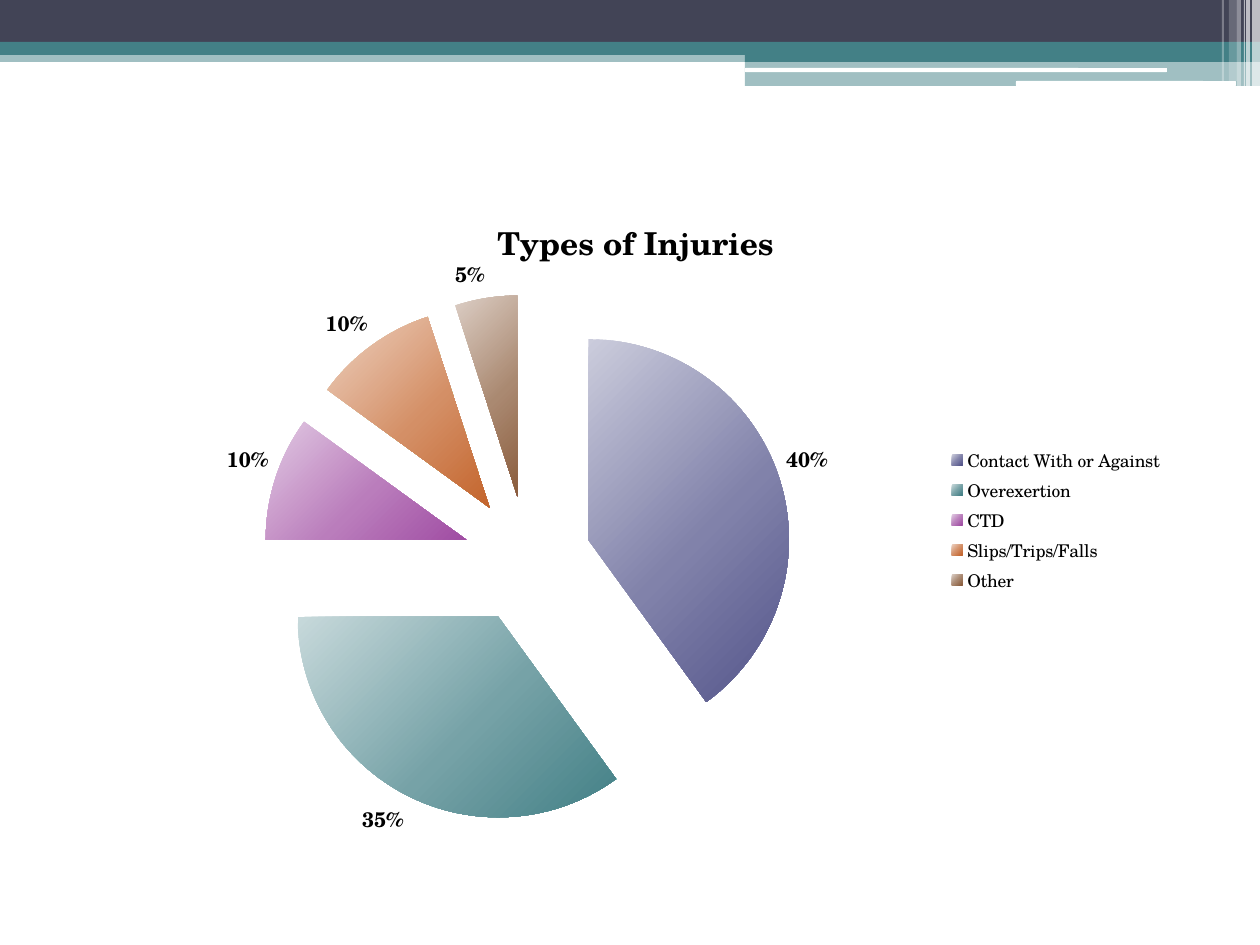
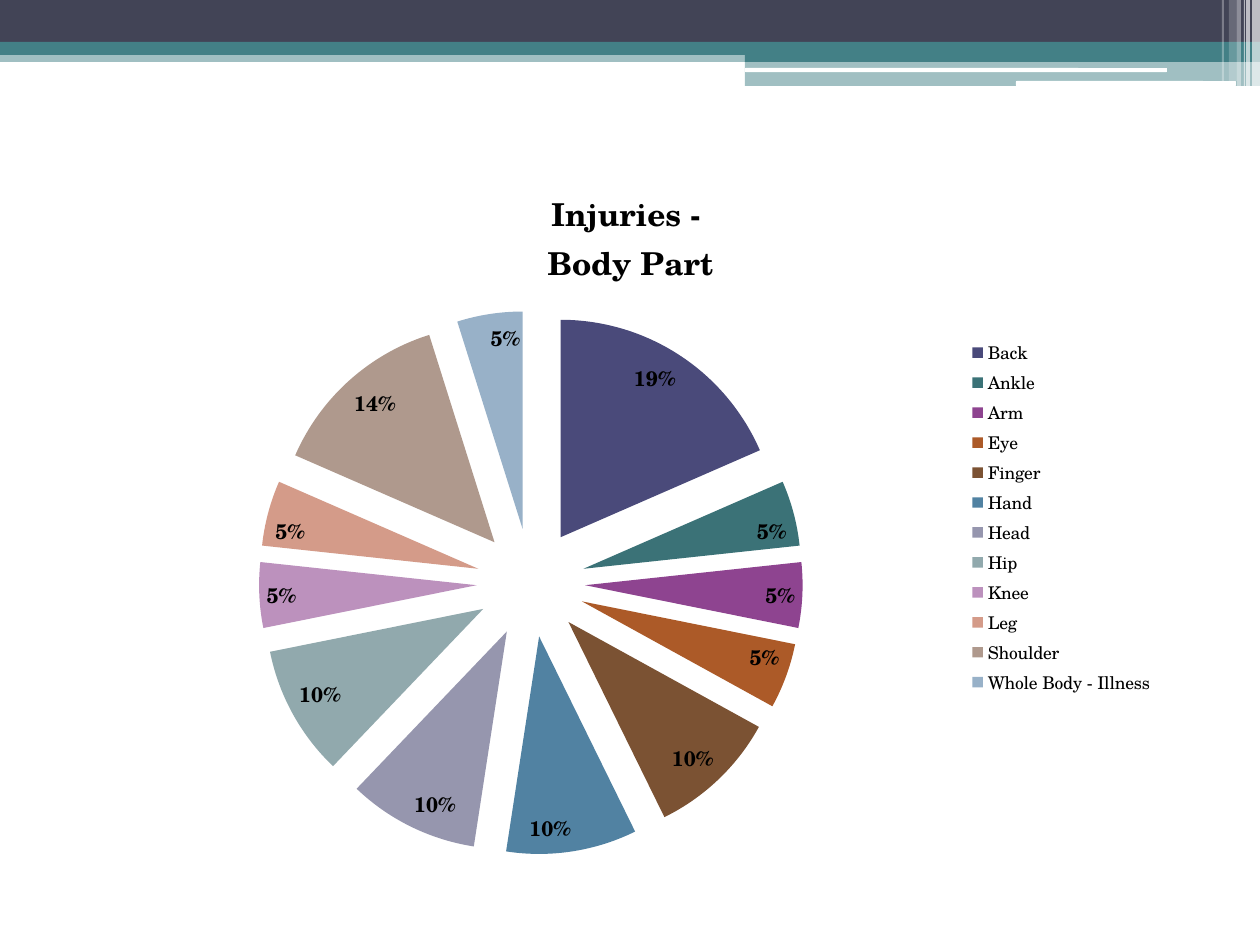
"""Build two injury pie-chart slides under a shared layered header."""
from copy import deepcopy
from dataclasses import dataclass

from lxml import etree
from pptx import Presentation
from pptx.chart.data import CategoryChartData
from pptx.dml.color import RGBColor
from pptx.enum.chart import XL_CHART_TYPE, XL_LABEL_POSITION, XL_LEGEND_POSITION
from pptx.enum.shapes import MSO_SHAPE
from pptx.oxml.ns import qn
from pptx.util import Pt

PIE = XL_CHART_TYPE.PIE
RIGHT = XL_LEGEND_POSITION.RIGHT
OUT, IN = XL_LABEL_POSITION.OUTSIDE_END, XL_LABEL_POSITION.INSIDE_END
RECT, ROUND = MSO_SHAPE.RECTANGLE, MSO_SHAPE.ROUNDED_RECTANGLE
PX = 914400 / 126


@dataclass(frozen=True)
class Theme:
    """Colours, font and type sizes."""
    dark: str = "424456"
    teal: str = "438086"
    white: str = "FFFFFF"
    ink: str = "000000"
    font: str = "TeX Gyre Schola"
    title: int = 18
    label: int = 12
    body: int = 10


THEME = Theme()

BANDS = [
    (RECT, (0, 50, 1260, 12), THEME.teal, 50),
    (RECT, (0, 0, 1260, 43), THEME.dark, 100),
    (RECT, (0, 42, 1260, 13), THEME.teal, 100),
    (RECT, (745, 49, 515, 13), THEME.teal, 100),
    (RECT, (745, 61, 515, 25), THEME.teal, 50),
    (ROUND, (745, 68, 422, 4), THEME.white, 100),
    (ROUND, (1016, 81, 220, 5), THEME.white, 100),
]
STRIPES = [(1252, 8, 86, 65), (1246, 4, 86, 65), (1244, 1, 86, 60),
           (1237, 4, 86, 40), (1229, 8, 81, 20), (1222, 2, 81, 30)]
BANDS += [(RECT, (x, 0, w, h), THEME.white, alpha) for x, w, h, alpha in STRIPES]

CHARTS = [
    {
        "title": "Types of Injuries", "box": (95, 189, 1081, 662),
        "plot": {"x": 0.02, "y": 0.16, "w": 0.76, "h": 0.8},
        "burst": 32, "place": OUT, "shade": True,
        "rows": [
            ("Contact With or Against", 40, "53548A"),
            ("Overexertion", 35, "438086"),
            ("CTD", 10, "A04DA3"),
            ("Slips/Trips/Falls", 10, "C4652D"),
            ("Other", 5, "8B5D3D"),
        ],
    },
    {
        "title": "Injuries - \nBody Part", "box": (95, 163, 1071, 709),
        "plot": None, "burst": 25, "place": IN, "shade": False,
        "rows": [
            ("Back", 19, "4A4A7A"), ("Ankle", 5, "3B7277"),
            ("Arm", 5, "8E4490"), ("Eye", 5, "AC5A28"),
            ("Finger", 10, "7B5233"), ("Hand", 10, "5182A2"),
            ("Head", 10, "9696AE"), ("Hip", 10, "91A9AD"),
            ("Knee", 5, "BC91BD"), ("Leg", 5, "D49B89"),
            ("Shoulder", 14, "AF998D"), ("Whole Body - Illness", 5, "98B1C8"),
        ],
    },
]


def rgb(code):
    """Turn a hex code into a colour."""
    return RGBColor.from_string(code)


def tint(code, part):
    """Blend a colour towards white."""
    return RGBColor(*(round(c + (255 - c) * part) for c in rgb(code)))


def scale(box):
    """Turn px into EMU."""
    return [round(n * PX) for n in box]


def style(font, size, bold):
    """Set the face, size, weight and colour of a font."""
    font.name, font.size, font.bold = THEME.font, Pt(size), bold
    font.color.rgb = rgb(THEME.ink)


def header(slide, layout):
    """Draw the bands and hand them to the layout."""
    for spot in list(layout.placeholders):
        layout.shapes.element.remove(spot.element)
    parts = []
    for kind, box, code, alpha in BANDS:
        part = slide.shapes.add_shape(kind, *scale(box))
        part.shadow.inherit = False
        part.fill.solid()
        part.fill.fore_color.rgb = rgb(code)
        part.line.fill.background()
        if alpha < 100:
            tone = part.element.spPr.find(".//" + qn("a:srgbClr"))
            etree.SubElement(tone, qn("a:alpha"), val=str(alpha * 1000))
        parts.append(part)
    for part in parts:
        layout.shapes.element.append(part.element)


def blend(fill, code, root):
    """Fill a slice with a diagonal three-stop gradient."""
    fill.gradient()
    fill.gradient_angle = 315
    stops = root.findall(".//" + qn("a:gsLst"))[-1]
    stops.append(deepcopy(stops[-1]))
    steps = ((0, 0.7), (0.55, 0.27), (1, 0))
    for stop, (pos, part) in zip(fill.gradient_stops, steps):
        stop.position = pos
        stop.color.rgb = tint(code, part)


def arrange(chart, plot):
    """Place the inner plot area by fractions of the chart."""
    area = chart.element.find(".//" + qn("c:plotArea"))
    old = area.find(qn("c:layout"))
    if old is not None:
        area.remove(old)
    frame = etree.Element(qn("c:layout"))
    area.insert(0, frame)
    hand = etree.SubElement(frame, qn("c:manualLayout"))
    pairs = [("layoutTarget", "inner"), ("xMode", "edge"), ("yMode", "edge")]
    for key, val in pairs + list(plot.items()):
        etree.SubElement(hand, qn("c:" + key), val=str(val))


def draw(slide, item):
    """Add one exploded pie."""
    names, vals, codes = zip(*item["rows"])
    data = CategoryChartData()
    data.categories = names
    data.add_series("Series 1", vals)
    chart = slide.shapes.add_chart(PIE, *scale(item["box"]), data).chart
    style(chart.font, THEME.body, False)

    chart.has_title = True
    text = chart.chart_title.text_frame
    text.text = item["title"]
    for para in text.paragraphs:
        for run in para.runs:
            style(run.font, THEME.title, True)
    chart.chart_title.include_in_layout = False

    chart.has_legend = True
    chart.legend.position = RIGHT
    chart.legend.include_in_layout = False
    style(chart.legend.font, THEME.body, False)
    if item["plot"]:
        arrange(chart, item["plot"])

    pie = chart.plots[0]
    pie.vary_by_categories = True
    root = chart.element.find(".//" + qn("c:ser"))
    burst = etree.Element(qn("c:explosion"), val=str(item["burst"]))
    root.find(qn("c:tx")).addnext(burst)
    for idx, code in enumerate(codes):
        form = pie.series[0].points[idx].format
        form.line.fill.background()
        if item["shade"]:
            blend(form.fill, code, root)
        else:
            form.fill.solid()
            form.fill.fore_color.rgb = rgb(code)

    tags = pie.series[0].data_labels
    tags.show_value = True
    tags.number_format, tags.number_format_is_linked = '0"%"', False
    tags.position = item["place"]
    style(tags.font, THEME.label, True)


def main():
    """Build and save the deck."""
    deck = Presentation()
    deck.slide_width, deck.slide_height = scale((1260, 945))
    layout = deck.slide_layouts[6]
    slides = [deck.slides.add_slide(layout) for _ in CHARTS]
    header(slides[0], layout)
    for slide, item in zip(slides, CHARTS):
        draw(slide, item)
    deck.save("out.pptx")


if __name__ == "__main__":
    main()
